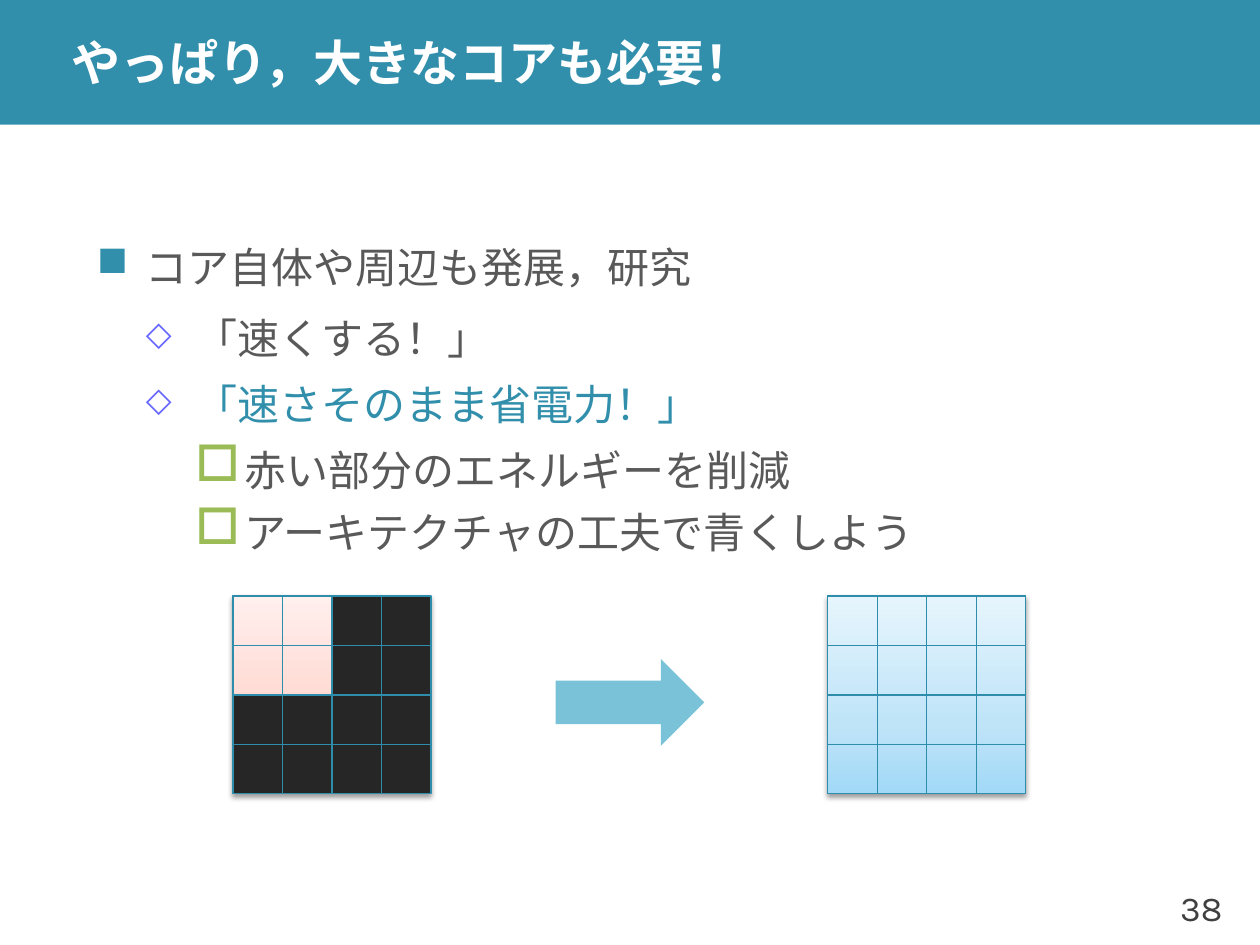
import pptx
import pptx.dml.color
import pptx.enum.shapes
import pptx.enum.text
import pptx.oxml
import pptx.oxml.ns
import pptx.util
import copy

Inches = pptx.util.Inches
Pt = pptx.util.Pt
RGB = pptx.dml.color.RGBColor
SHAPE = pptx.enum.shapes.MSO_SHAPE
ALIGN = pptx.enum.text.PP_ALIGN
qn = pptx.oxml.ns.qn

TEAL = RGB(0x32, 0x8F, 0xAC)
EDGE = RGB(0x2E, 0x8D, 0xAB)
SKY = RGB(0x79, 0xC2, 0xD8)
DARK = RGB(0x26, 0x26, 0x26)
GRAY = RGB(0x59, 0x59, 0x59)
INK = RGB(0x40, 0x40, 0x40)
WHITE = RGB(0xFF, 0xFF, 0xFF)
VIOLET = RGB(0x66, 0x66, 0xFF)
GREEN = RGB(0x9B, 0xBB, 0x57)
REDS = [RGB(0xFF, 0xC3, 0xBA), RGB(0xFF, 0xD5, 0xCE), RGB(0xFF, 0xEF, 0xED)]
BLUES = [RGB(0xA2, 0xD9, 0xF7), RGB(0xBF, 0xE4, 0xF8), RGB(0xE6, 0xF5, 0xFD)]

FONT = "Karla"
SIDE = 1.57
COUNT = 4
INDENT = 0.39
LEVELS = [("■", TEAL, 100, 24, 6), ("◇", VIOLET, 80, 3, 3), ("□", GREEN, 120, 3, 1)]
ITEMS = [
    (0, "コア自体や周辺も発展，研究", GRAY),
    (1, "「速くする！」", GRAY),
    (1, "「速さそのまま省電力！」", TEAL),
    (2, "赤い部分のエネルギーを削減", GRAY),
    (2, "アーキテクチャの工夫で青くしよう", GRAY),
]


def xml(text):
    """Parse a drawing element given without its namespace."""
    head, rest = text.split(" ", 1)
    return pptx.oxml.parse_xml(f"{head} {pptx.oxml.ns.nsdecls('a')} {rest}")


def add_run(para, text, size, color, bold=False):
    """Add one styled run to a paragraph."""
    run = para.add_run()
    run.text = text
    font = run.font
    font.name, font.size, font.bold = FONT, Pt(size), bold
    font.color.rgb = color
    latin = run._r.find(qn("a:rPr")).find(qn("a:latin"))
    latin.addnext(xml(f'<a:ea typeface="{FONT}"/>'))


def add_shape(slide, kind, box, fill=None, line=None):
    """Add a preset shape with an optional solid fill and outline."""
    shape = slide.shapes.add_shape(kind, *map(Inches, box))
    shape.shadow.inherit = False
    if fill is None:
        shape.fill.background()
    else:
        shape.fill.solid()
        shape.fill.fore_color.rgb = fill
    if line is None:
        shape.line.fill.background()
    else:
        shape.line.color.rgb = line
        shape.line.width = Pt(0.75)
    return shape


def add_box(slide, box):
    """Add a wrapped text box centred vertically and return its frame."""
    frame = slide.shapes.add_textbox(*map(Inches, box)).text_frame
    frame.word_wrap = True
    frame.vertical_anchor = pptx.enum.text.MSO_ANCHOR.MIDDLE
    return frame


def add_title(slide, text):
    """Fill the title placeholder and set the band behind it."""
    title = slide.shapes.title
    title.left, title.top = Inches(0.47), Inches(0)
    title.width, title.height = Inches(9.53), Inches(0.99)
    frame = title.text_frame
    frame.auto_size = pptx.enum.text.MSO_AUTO_SIZE.NONE
    frame.vertical_anchor = pptx.enum.text.MSO_ANCHOR.MIDDLE
    frame.margin_top = frame.margin_bottom = Inches(0)
    para = frame.paragraphs[0]
    para.alignment = ALIGN.LEFT
    add_run(para, text, 28, WHITE, True)
    band = add_shape(slide, SHAPE.RECTANGLE, (0, 0, 10, 0.99), TEAL)
    title.element.addprevious(band.element)


def set_bullet(para, level):
    """Give a paragraph the bullet, indent and spacing of its level."""
    mark, color, size, before, after = LEVELS[level]
    para.level = level
    para.line_spacing = 1.1
    para.space_before, para.space_after = Pt(before), Pt(after)
    props = para._p.get_or_add_pPr()
    props.set("marL", str(Inches(INDENT * (level + 1))))
    props.set("indent", str(-Inches(INDENT)))
    props.append(xml(f'<a:buClr ><a:srgbClr val="{color}"/></a:buClr>'))
    props.append(xml(f'<a:buSzPct val="{size * 1000}"/>'))
    props.append(xml(f'<a:buChar char="{mark}"/>'))


def add_list(slide):
    """Add the bulleted points."""
    frame = add_box(slide, (0.67, 1.19, 8.76, 3.92))
    for index, (level, text, color) in enumerate(ITEMS):
        para = frame.add_paragraph() if index else frame.paragraphs[0]
        set_bullet(para, level)
        add_run(para, text, 24, color)


def add_chip(slide, left, top, colors, lit):
    """Add a shaded square split into cells, dark outside the lit corner."""
    base = add_shape(slide, SHAPE.RECTANGLE, (left, top, SIDE, SIDE), line=EDGE)
    base.fill.gradient()
    base.fill.gradient_angle = 90
    stops = base.element.spPr.find(qn("a:gradFill")).find(qn("a:gsLst"))
    stops.append(copy.deepcopy(stops[-1]))
    for stop, color, place in zip(base.fill.gradient_stops, colors, (0, 0.35, 1)):
        stop.color.rgb = color
        stop.position = place
    base.element.spPr.find(qn("a:effectLst")).append(xml(
        f'<a:outerShdw blurRad="{Pt(3.1)}" dist="{Pt(1.6)}" dir="5400000" '
        'rotWithShape="0"><a:srgbClr val="000000"><a:alpha val="38000"/>'
        '</a:srgbClr></a:outerShdw>'))
    cell = SIDE / COUNT
    for row in range(COUNT):
        for col in range(COUNT):
            box = (left + col * cell, top + row * cell, cell, cell)
            fill = None if max(row, col) < lit else DARK
            add_shape(slide, SHAPE.RECTANGLE, box, fill, EDGE)


def add_number(slide, text):
    """Add the page number."""
    para = add_box(slide, (9.13, 6.9, 0.67, 0.6)).paragraphs[0]
    para.alignment = ALIGN.RIGHT
    add_run(para, text, 20, INK)


def main():
    """Build and save the slide."""
    deck = pptx.Presentation()
    deck.slide_width, deck.slide_height = Inches(10), Inches(7.5)
    slide = deck.slides.add_slide(deck.slide_layouts[5])
    add_title(slide, "やっぱり，大きなコアも必要！")
    add_number(slide, "38")
    add_list(slide)
    add_chip(slide, 1.85, 4.73, REDS, 2)
    add_shape(slide, SHAPE.RIGHT_ARROW, (4.41, 5.23, 1.18, 0.69), SKY)
    add_chip(slide, 6.57, 4.73, BLUES, COUNT)
    deck.save("out.pptx")


if __name__ == "__main__":
    main()
